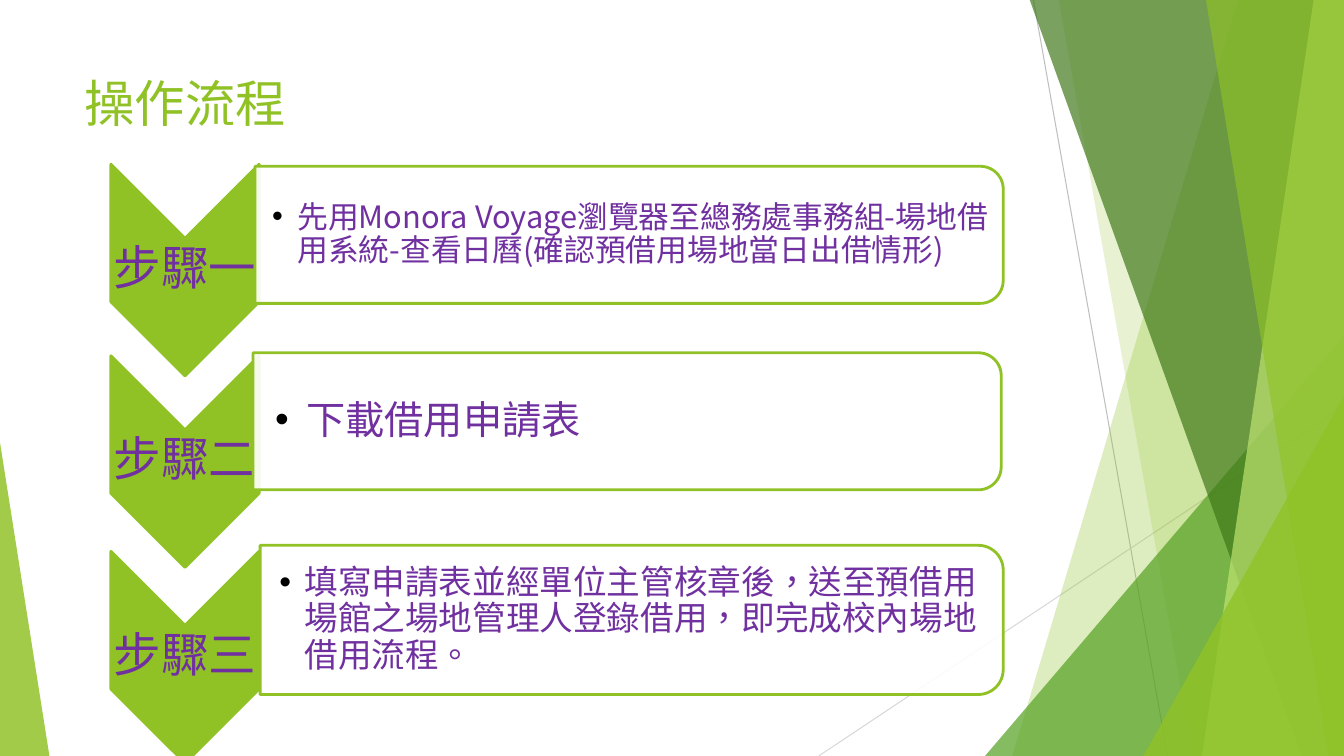
import pptx
import pptx.dml.color
import pptx.enum.lang
import pptx.enum.shapes
import pptx.enum.text
import pptx.oxml
import pptx.oxml.ns
import pptx.util
from lxml import etree

Inches = pptx.util.Inches
Pt = pptx.util.Pt
qn = pptx.oxml.ns.qn
Shape = pptx.enum.shapes.MSO_SHAPE
Align = pptx.enum.text.PP_ALIGN
Anchor = pptx.enum.text.MSO_ANCHOR

COLORS = {
    "green": "90C226",
    "leaf": "54A021",
    "forest": "3F7818",
    "lime": "BFE471",
    "purple": "7030A0",
    "white": "FFFFFF",
    "black": "000000",
    "gray": "BFBFBF",
    "silver": "D8D8D8",
}
HEADING_FONT = "Lato"
BODY_FONT = "Noto Sans CJK SC"
WIDTH, HEIGHT, TOP = 13.33, 7.5, -0.01


def rgb(name):
    return pptx.dml.color.RGBColor.from_string(COLORS[name])


def write_text(frame, text, size, color, font=BODY_FONT, align=Align.LEFT,
               spacing=None, bullet_indent=None):
    """Fill the first paragraph; bullet_indent is a hanging indent in inches."""
    paragraph = frame.paragraphs[0]
    paragraph.alignment = align
    if spacing:
        paragraph.line_spacing = spacing
    if bullet_indent:
        properties = paragraph._p.get_or_add_pPr()
        properties.set("marL", str(Inches(bullet_indent)))
        properties.set("indent", str(-Inches(bullet_indent)))
        bullet_color = etree.SubElement(properties, qn("a:buClr"))
        etree.SubElement(bullet_color, qn("a:srgbClr"), val=COLORS["black"])
        etree.SubElement(properties, qn("a:buFont"), typeface="Arial")
        etree.SubElement(properties, qn("a:buChar"), char="•")
    run = paragraph.add_run()
    run.text = text
    run.font.size = Pt(size)
    run.font.color.rgb = rgb(color)
    run.font.name = font
    run.font.language_id = pptx.enum.lang.MSO_LANGUAGE_ID.TRADITIONAL_CHINESE
    etree.SubElement(run._r.get_or_add_rPr(), qn("a:ea"), typeface=font)


class SlideBuilder:
    def __init__(self, slide):
        self.slide = slide

    def style(self, shape, fill, opacity=100, line=None):
        shape.shadow.inherit = False
        shape.fill.solid()
        shape.fill.fore_color.rgb = rgb(fill)
        if opacity < 100:
            color = shape._element.spPr.find(qn("a:solidFill"))[0]
            etree.SubElement(color, qn("a:alpha"), val=str(opacity * 1000))
        if line:
            shape.line.color.rgb = rgb(line)
            shape.line.width = Pt(2)
        else:
            shape.line.fill.background()

    def line(self, start, end, color):
        connector = self.slide.shapes.add_connector(
            pptx.enum.shapes.MSO_CONNECTOR.STRAIGHT,
            *(Inches(value) for value in start + end))
        connector.line.color.rgb = rgb(color)
        connector.line.width = Pt(0.75)
        etree.SubElement(connector._element.spPr, qn("a:effectLst"))

    def band(self, top_left, bottom_left, fill, opacity):
        """Draw a slanted band that reaches the right edge of the slide."""
        builder = self.slide.shapes.build_freeform(Inches(top_left), Inches(TOP))
        corners = [(WIDTH, TOP), (WIDTH, HEIGHT), (bottom_left, HEIGHT)]
        builder.add_line_segments([(Inches(x), Inches(y)) for x, y in corners])
        self.style(builder.convert_to_shape(), fill, opacity)

    def shape(self, kind, left, top, width, height, fill, opacity=100,
              line=None, rotation=0, adjustment=None):
        shape = self.slide.shapes.add_shape(
            kind, Inches(left), Inches(top), Inches(width), Inches(height))
        shape.rotation = rotation
        if adjustment is not None:
            shape.adjustments[0] = adjustment
        self.style(shape, fill, opacity, line)

    def turned(self, kind, left, top, width, height, **style):
        """Place a shape rotated by 90 degrees, given the box it shows in."""
        shift = (width - height) / 2
        self.shape(kind, left + shift, top - shift, height, width,
                   rotation=90, line="green", **style)

    def text(self, text, left, top, width, height, insets, anchor, **style):
        box = self.slide.shapes.add_textbox(
            Inches(left), Inches(top), Inches(width), Inches(height))
        frame = box.text_frame
        frame.word_wrap = True
        frame.vertical_anchor = anchor
        (frame.margin_left, frame.margin_top, frame.margin_right,
         frame.margin_bottom) = (Inches(inset) for inset in insets)
        write_text(frame, text, **style)

    def step(self, label, text, chevron_top, panel, text_height, inset, indent, size):
        left, top, width, height = panel
        self.turned(Shape.CHEVRON, 1.1, chevron_top, 1.47, 2.1, fill="green")
        self.text(label, 1.1, chevron_top + 0.73, 1.47, 0.63, [0.02] * 4,
                  Anchor.MIDDLE, size=34, color="purple",
                  align=Align.CENTER, spacing=0.9)
        self.turned(Shape.ROUND_2_SAME_RECTANGLE, left, top, width, height,
                    fill="white", opacity=90)
        self.text(text, left, top + (height - text_height) / 2, width - 0.06,
                  text_height, [inset, 0.02, 0.02, 0.02], Anchor.MIDDLE,
                  size=size, color="purple", spacing=0.9, bullet_indent=indent)


def draw_backdrop(builder):
    builder.line((10.25, 0), (11.58, HEIGHT), "gray")
    builder.line((WIDTH, 4.03), (8.12, HEIGHT), "silver")
    builder.band(12.28, 10.04, "green", 29)
    builder.band(10.5, 11.83, "green", 20)
    builder.shape(Shape.ISOSCELES_TRIANGLE, 9.77, 3.33, 3.56, 4.17,
                  "leaf", 71, adjustment=1)
    builder.band(10.21, 12.91, "forest", 69)
    builder.band(13.03, 11.92, "lime", 69)
    builder.band(11.96, 13.18, "green", 64)
    builder.shape(Shape.ISOSCELES_TRIANGLE, 11.34, 3.93, 1.99, 3.57,
                  "green", 80, adjustment=1)
    builder.shape(Shape.ISOSCELES_TRIANGLE, 0, 4.39, 0.49, 3.11,
                  "green", 84, adjustment=0)


# label, text, chevron top, panel box, text height, left inset, indent, size
STEPS = [
    ("步驟一", "先用Monora Voyage瀏覽器至總務處事務組-場地借用系統-查看日曆"
     "(確認預借用場地當日出借情形)",
     1.63, (2.53, 1.65, 7.42, 1.36), 1.23, 0.17, 0.25, 22),
    ("步驟二", "下載借用申請表",
     3.53, (2.51, 3.5, 7.42, 1.36), 1.23, 0.22, 0.31, 28),
    ("步驟三", "填寫申請表並經單位主管核章後，送至預借用場館之場地管理人登錄借用，"
     "即完成校內場地借用流程。",
     5.47, (2.58, 5.41, 7.37, 1.48), 1.34, 0.19, 0.25, 24),
]


def main():
    presentation = pptx.Presentation()
    presentation.slide_width = Inches(WIDTH)
    presentation.slide_height = Inches(HEIGHT)
    builder = SlideBuilder(presentation.slides.add_slide(presentation.slide_layouts[6]))
    draw_backdrop(builder)
    builder.text("操作流程", 0.74, 0.67, 9.4, 0.84, (0.1, 0.05, 0.1, 0.05),
                 Anchor.TOP, size=36, color="green", font=HEADING_FONT)
    for step in STEPS:
        builder.step(*step)
    presentation.save("out.pptx")


if __name__ == "__main__":
    main()
